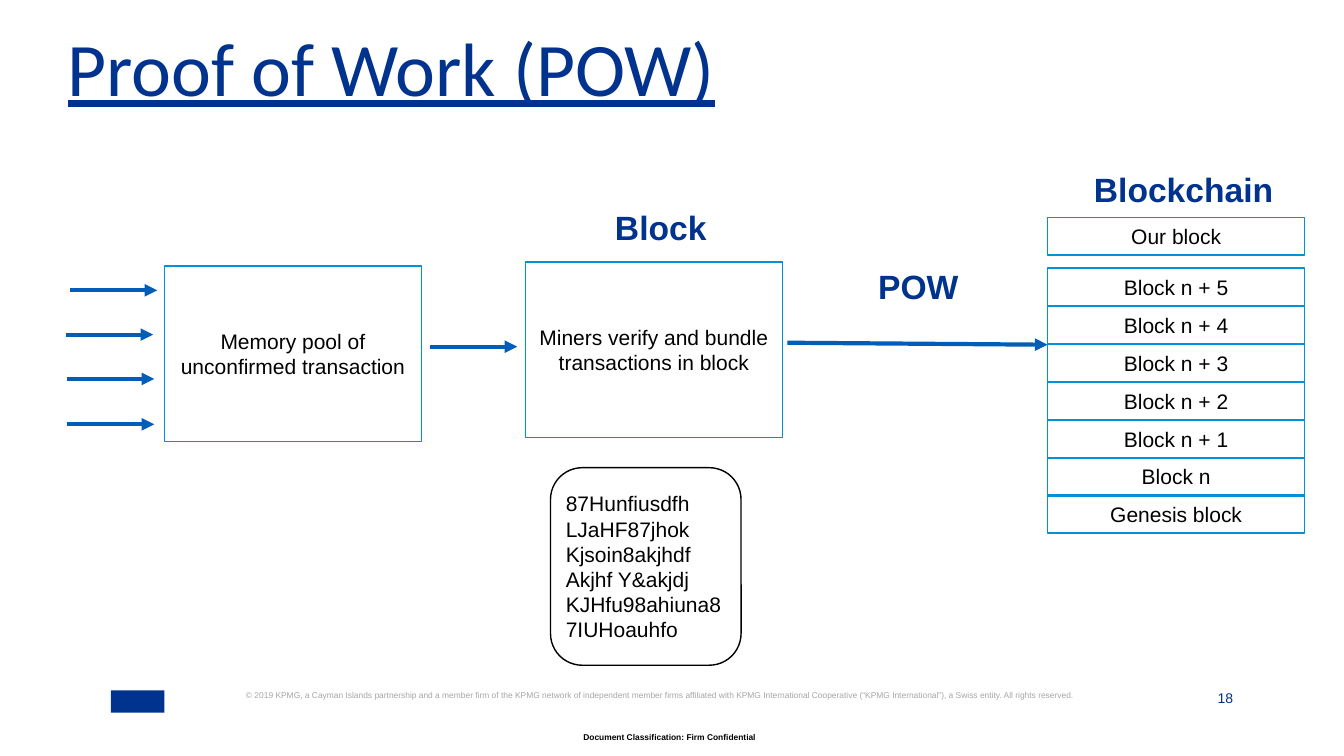
from lxml.etree import SubElement
from pptx import Presentation
from pptx.dml.color import RGBColor
from pptx.enum.shapes import MSO_CONNECTOR, MSO_SHAPE
from pptx.enum.text import MSO_ANCHOR as ANCHOR, PP_ALIGN as ALIGN
from pptx.oxml.ns import qn
from pptx.util import Inches, Pt

NAVY = RGBColor(0x00, 0x33, 0x8D)
BLUE = RGBColor(0x00, 0x5E, 0xB8)
SKY = RGBColor(0x00, 0x91, 0xDA)
GREY = RGBColor(0xA6, 0xA6, 0xA6)
BLACK = RGBColor(0x00, 0x00, 0x00)

presentation = Presentation()
presentation.slide_width = Inches(13.33)
presentation.slide_height = Inches(7.5)
slide = presentation.slides.add_slide(presentation.slide_layouts[6])


def write(shape, text, size, color, align=ALIGN.LEFT, anchor=ANCHOR.TOP,
          inset=0, spacing=None, font="Arial", bold=False, underline=False):
    frame = shape.text_frame
    frame.text = text
    frame.word_wrap = True
    frame.vertical_anchor = anchor
    frame.margin_left = frame.margin_right = Inches(inset)
    frame.margin_top = frame.margin_bottom = Inches(inset)
    for paragraph in frame.paragraphs:
        paragraph.alignment = align
        if spacing:
            paragraph.line_spacing = spacing
        for run in paragraph.runs:
            run.font.name = font
            run.font.size = Pt(size)
            run.font.bold = bold
            run.font.underline = underline
            run.font.color.rgb = color


def add_box(kind, left, top, width, height, text, line_color, align=ALIGN.CENTER):
    shape = slide.shapes.add_shape(
        kind, Inches(left), Inches(top), Inches(width), Inches(height))
    shape.shadow.inherit = False
    shape.fill.background()
    shape.line.color.rgb = line_color
    shape.line.width = Pt(1)
    write(shape, text, 15, BLACK, align, ANCHOR.MIDDLE, inset=0.06)


# Title, headings and footer
heading = dict(size=24, color=NAVY, spacing=0.7, bold=True)
texts = [
    (0.67, 0.45, 11.15, 0.58, "Proof of Work (POW)",
     dict(size=54, color=NAVY, spacing=0.7, font="Calibri", underline=True)),
    (6.1, 2.16, 1.66, 0.57, "Block", heading),
    (8.71, 2.75, 0.95, 0.57, "POW", heading),
    (10.85, 1.79, 1.98, 0.46, "Blockchain", heading),
    (2.44, 6.85, 8.54, 0.29,
     "© 2019 KPMG, a Cayman Islands partnership and a member firm of the KPMG "
     "network of independent member firms affiliated with KPMG International "
     "Cooperative (“KPMG International”), a Swiss entity. All rights reserved.",
     dict(size=6, color=GREY)),
    (2.84, 7.26, 7.6, 0.15, "Document Classification: Firm Confidential",
     dict(size=6, color=BLACK, align=ALIGN.CENTER, bold=True)),
    (11.74, 6.85, 0.49, 0.16, "18",
     dict(size=10, color=NAVY, align=ALIGN.RIGHT, anchor=ANCHOR.BOTTOM)),
]
for left, top, width, height, text, style in texts:
    text_box = slide.shapes.add_textbox(
        Inches(left), Inches(top), Inches(width), Inches(height))
    write(text_box, text, **style)

# Plain footer mark
mark = slide.shapes.add_shape(
    MSO_SHAPE.RECTANGLE, Inches(1.1), Inches(6.85), Inches(0.53), Inches(0.22))
mark.shadow.inherit = False
mark.fill.solid()
mark.fill.fore_color.rgb = NAVY
mark.line.fill.background()

# Memory pool, mining step and the block's hash
BOX_WIDTH = 2.55
add_box(MSO_SHAPE.RECTANGLE, 1.63, 2.64, BOX_WIDTH, 1.74,
        "Memory pool of unconfirmed transaction", SKY)
add_box(MSO_SHAPE.RECTANGLE, 5.21, 2.6, BOX_WIDTH, 1.74,
        "Miners verify and bundle transactions in block", SKY)
hash_lines = ["87Hunfiusdfh", "LJaHF87jhok", "Kjsoin8akjhdf", "Akjhf Y&akjdj",
              "KJHfu98ahiuna87IUHoauhfo"]
add_box(MSO_SHAPE.ROUNDED_RECTANGLE, 5.46, 4.64, 1.89, 1.96,
        "\n".join(hash_lines), BLACK, ALIGN.LEFT)

# Blockchain stack, with the new block set apart on top
CHAIN_LEFT, CHAIN_TOP, CHAIN_BOTTOM, BLOCK_HEIGHT = 10.39, 2.66, 4.92, 0.37
chain = [f"Block n + {number}" for number in range(5, 0, -1)]
chain += ["Block n", "Genesis block"]
pitch = (CHAIN_BOTTOM - CHAIN_TOP) / (len(chain) - 1)
blocks = [(2.16, "Our block")]
blocks += [(CHAIN_TOP + index * pitch, name) for index, name in enumerate(chain)]
for top, name in blocks:
    add_box(MSO_SHAPE.RECTANGLE, CHAIN_LEFT, top, BOX_WIDTH, BLOCK_HEIGHT, name, SKY)

# Arrows: incoming transactions, pool to miners, miners to chain
SHORT = 0.87
short_starts = [(0.69, 2.88), (0.65, 3.32), (0.66, 3.76), (0.66, 4.21), (4.26, 3.44)]
arrows = [(left, top, left + SHORT, top) for left, top in short_starts]
arrows.append((7.81, 3.4, CHAIN_LEFT, 3.42))
for ends in arrows:
    arrow = slide.shapes.add_connector(
        MSO_CONNECTOR.STRAIGHT, *[Inches(value) for value in ends])
    arrow.line.color.rgb = BLUE
    arrow.line.width = Pt(3)
    SubElement(arrow.line._get_or_add_ln(), qn("a:tailEnd"), type="triangle")
    SubElement(arrow._element.spPr, qn("a:effectLst"))

presentation.save("out.pptx")
